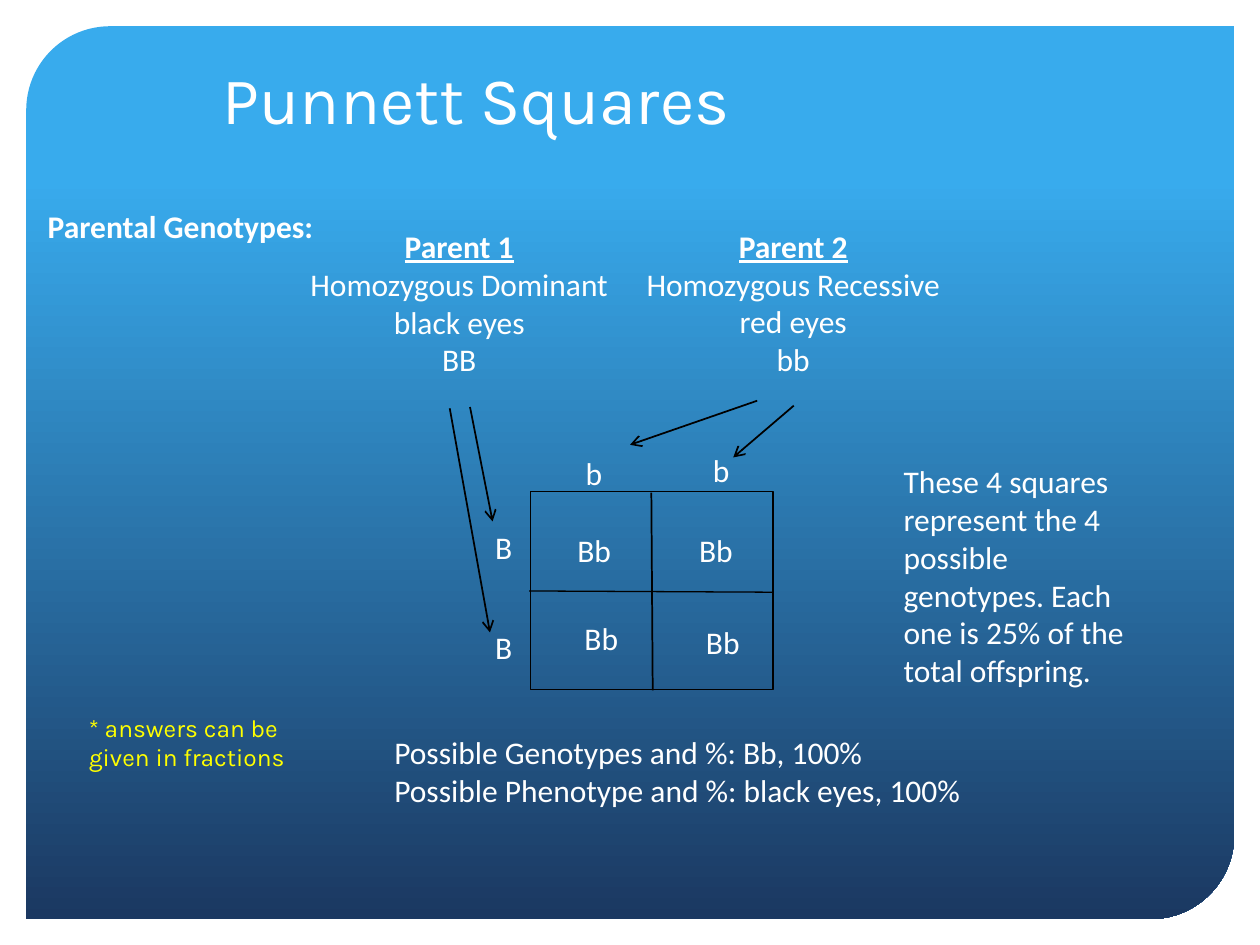
import pptx
import pptx.util
import pptx.dml.color
import pptx.enum.shapes
import pptx.enum.text
import pptx.oxml.ns
from lxml import etree

Pt = pptx.util.Pt
Color = pptx.dml.color.RGBColor.from_string
Align = pptx.enum.text.PP_ALIGN
AutoSize = pptx.enum.text.MSO_AUTO_SIZE
Shape = pptx.enum.shapes.MSO_SHAPE

THEME = {
    "panel_top": "38ABED",
    "panel_bottom": "1B3861",
    "ink": "000000",
    "title": {"name": "Karla", "size": 38, "color": "FFFFFF"},
    "body": {"name": "Calibri", "size": 18, "color": "FFFFFF"},
    "heading": {"name": "Calibri", "size": 18, "color": "FFFFFF", "bold": True},
    "parent": {"name": "Calibri", "size": 18, "color": "FFFFFF", "bold": True, "underline": True},
    "note": {"name": "Karla", "size": 14, "color": "FFFF00"},
}


def write(shape, lines, styles, align=Align.LEFT, wrap=False):
    """Fill a shape with one paragraph per line; the last style carries on."""
    frame = shape.text_frame
    frame.word_wrap = wrap
    frame.text = "\n".join(lines)
    for index, paragraph in enumerate(frame.paragraphs):
        paragraph.alignment = align
        font = paragraph.runs[0].font
        style = THEME[styles[min(index, len(styles) - 1)]]
        for key, value in style.items():
            if key == "color":
                font.color.rgb = Color(value)
            else:
                setattr(font, key, Pt(value) if key == "size" else value)


def draw_line(shapes, start, end, width=1, arrow=False):
    """Draw a straight line, with an open arrowhead at its end if asked."""
    points = [Pt(value) for value in (*start, *end)]
    line = shapes.add_connector(pptx.enum.shapes.MSO_CONNECTOR.STRAIGHT, *points)
    line.line.color.rgb = Color(THEME["ink"])
    line.line.width = Pt(width)
    if arrow:
        outline = line.line._get_or_add_ln()
        etree.SubElement(outline, pptx.oxml.ns.qn("a:tailEnd"), type="arrow")
    etree.SubElement(line._element.spPr, pptx.oxml.ns.qn("a:effectLst"))


presentation = pptx.Presentation()
presentation.slide_width = Pt(720)
presentation.slide_height = Pt(540)
slide = presentation.slides.add_slide(presentation.slide_layouts[5])
shapes = slide.shapes

# Gradient panel, behind everything
panel = shapes.add_shape(Shape.ROUND_2_DIAG_RECTANGLE, Pt(15), Pt(15), Pt(690.3), Pt(510.3))
panel.shadow.inherit = False
panel.adjustments[0] = 0.094
panel.adjustments[1] = 0
panel.line.fill.background()
panel.fill.gradient()
panel.fill.gradient_angle = 270
stops = ((0.17, THEME["panel_top"]), (1, THEME["panel_bottom"]))
for stop, (position, color) in zip(panel.fill.gradient_stops, stops):
    stop.position = position
    stop.color.rgb = Color(color)
shapes._spTree.insert(2, panel._element)

# Title
title = shapes.title
title.left, title.top, title.width, title.height = Pt(120.2), Pt(0), Pt(597), Pt(82.3)
write(title, ["Punnett Squares"], ["title"], wrap=True)
title.text_frame.auto_size = AutoSize.NONE
title.text_frame.vertical_anchor = pptx.enum.text.MSO_ANCHOR.BOTTOM

# Square with its two dividers
square = shapes.add_group_shape().shapes
frame = square.add_shape(Shape.RECTANGLE, Pt(303.3), Pt(281), Pt(138.4), Pt(113))
frame.shadow.inherit = False
frame.fill.background()
frame.line.color.rgb = Color(THEME["ink"])
frame.line.width = Pt(0.75)
draw_line(square, (372.2, 281.5), (373, 394.5))
draw_line(square, (302.4, 337.7), (442, 338.4), width=0.75)

# Arrows from the parents to their alleles
for start, end in [
    ((432.7, 229), (360, 254.2)),
    ((453.6, 231.8), (419, 261.4)),
    ((268.6, 232.6), (281.5, 298)),
    ((257, 233.3), (280, 361.4)),
]:
    draw_line(shapes, start, end, arrow=True)

# Headings, parents and explanations: box, lines, styles, alignment, wrap
for box, lines, styles, align, wrap in [
    ((20.2, 114.5, 177, 24), ["Parental Genotypes:"], ["heading"], Align.LEFT, True),
    ((167.4, 126.2, 190, 96), ["Parent 1", "Homozygous Dominant", "black eyes", "BB"],
     ["parent", "body"], Align.CENTER, False),
    ((358.3, 126, 190, 96), ["Parent 2", "Homozygous Recessive", "red eyes", "bb"],
     ["parent", "body"], Align.CENTER, False),
    ((509.3, 260.6, 141.8, 129.6),
     ["These 4 squares represent the 4 possible genotypes. "
      "Each one is 25% of the total offspring."], ["body"], Align.LEFT, True),
    ((218.2, 415.4, 350, 72),
     ["Possible Genotypes and %: Bb, 100%", "Possible Phenotype and %: black eyes, 100%"],
     ["body"], Align.LEFT, False),
]:
    text_box = shapes.add_textbox(*[Pt(value) for value in box])
    write(text_box, lines, styles, align, wrap)

# Alleles and the genotypes in the square
for text, width, height, places in [
    ("b", 24, 28, [(327.6, 255.8), (400.3, 254.2)]),
    ("B", 24.5, 28, [(275.8, 298), (275.8, 355.5)]),
    ("Bb", 33.8, 26.6, [(322.8, 299.7), (326.9, 350.4), (396.3, 352.6), (392.4, 300.2)]),
]:
    for left, top in places:
        label = shapes.add_textbox(Pt(left), Pt(top), Pt(width), Pt(height))
        write(label, [text], ["body"])

# Note on fractions
note = shapes.add_textbox(Pt(43.7), Pt(403.8), Pt(136.8), Pt(41))
write(note, ["* answers can be given in fractions"], ["note"], wrap=True)
note.text_frame.auto_size = AutoSize.SHAPE_TO_FIT_TEXT

presentation.save("out.pptx")
